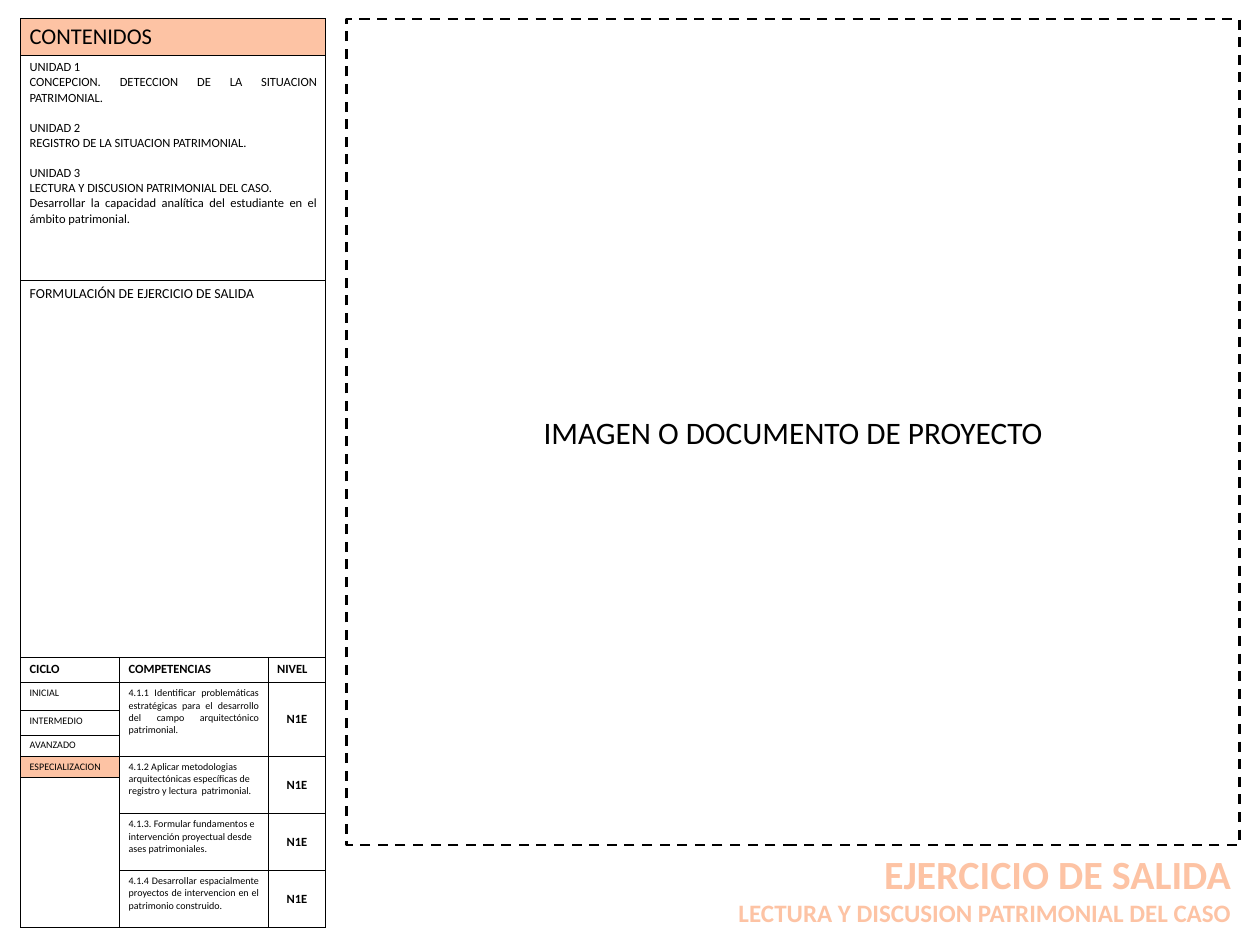
"""Builds the exit exercise sheet with its contents table and project area."""
from itertools import product

from lxml.etree import SubElement
from pptx import Presentation
from pptx.dml.color import RGBColor
from pptx.enum.dml import MSO_LINE
from pptx.enum.shapes import MSO_SHAPE
from pptx.enum.text import MSO_ANCHOR, MSO_AUTO_SIZE, PP_ALIGN
from pptx.oxml.ns import qn
from pptx.util import Inches, Pt

BLACK = "000000"
PEACH = "FDC3A4"
COLUMN_WIDTHS = [1.1, 1.65, 0.64]
ROW_HEIGHTS = [0.4, 2.5, 4.19, 0.28, 0.31, 0.27, 0.23, 0.24, 0.4, 0.63, 0.63]
UNITS = [
    ["UNIDAD 1", "CONCEPCION. DETECCION DE LA SITUACION PATRIMONIAL."],
    ["UNIDAD 2", "REGISTRO DE LA SITUACION PATRIMONIAL."],
    ["UNIDAD 3", "LECTURA Y DISCUSION PATRIMONIAL DEL CASO.",
     "Desarrollar la capacidad analítica del estudiante en el ámbito patrimonial."],
]
HEADINGS = ["CICLO", "COMPETENCIAS", "NIVEL"]
CYCLES = ["INICIAL", "INTERMEDIO", "AVANZADO", "ESPECIALIZACION"]
SKILLS = [
    (4, 3, PP_ALIGN.JUSTIFY, "4.1.1 Identificar problemáticas estratégicas para el "
     "desarrollo del campo arquitectónico patrimonial."),
    (7, 2, PP_ALIGN.LEFT, "4.1.2 Aplicar metodologias arquitectónicas específicas de "
     "registro y lectura  patrimonial."),
    (9, 1, PP_ALIGN.LEFT, "4.1.3. Formular fundamentos e intervención proyectual desde "
     "ases patrimoniales."),
    (10, 1, PP_ALIGN.JUSTIFY, "4.1.4 Desarrollar espacialmente proyectos de intervencion "
     "en el patrimonio construido."),
]


def color(value):
    """Turns a hex string into a colour."""
    return RGBColor.from_string(value)


class Sheet:
    """Holds the style and the current slide."""

    font = "Calibri"

    def __init__(self, deck):
        """Adds a page with a title."""
        self.page = deck.slides.add_slide(deck.slide_layouts[5])

    def paragraph(self, frame, text, size, bold=False, align=PP_ALIGN.JUSTIFY,
                  ink=BLACK, first=True, before=0):
        """Puts one paragraph into a text frame."""
        para = frame.paragraphs[0] if first else frame.add_paragraph()
        para.alignment = align
        para.space_before = Pt(before)
        span = para.add_run()
        span.text = text
        span.font.name = self.font
        span.font.size = Pt(size)
        span.font.bold = bold
        span.font.color.rgb = color(ink)

    def title(self, left, top, width, height, lines):
        """Fills the title placeholder with right-aligned lines."""
        box = self.page.shapes.title
        box.left, box.top = Inches(left), Inches(top)
        box.width, box.height = Inches(width), Inches(height)
        frame = box.text_frame
        frame.word_wrap = True
        frame.auto_size = MSO_AUTO_SIZE.NONE
        frame.vertical_anchor = MSO_ANCHOR.TOP
        for index, (text, size) in enumerate(lines):
            self.paragraph(frame, text, size, True, PP_ALIGN.RIGHT, PEACH, index == 0)

    def dashed_area(self, left, top, width, height, text):
        """Draws a dashed rectangle with a centred label."""
        box = self.page.shapes.add_shape(
            MSO_SHAPE.RECTANGLE, Inches(left), Inches(top), Inches(width), Inches(height))
        box.shadow.inherit = False
        box.fill.background()
        box.line.color.rgb = color(BLACK)
        box.line.width = Pt(2)
        box.line.dash_style = MSO_LINE.DASH
        box.text_frame.vertical_anchor = MSO_ANCHOR.MIDDLE
        self.paragraph(box.text_frame, text, 25, align=PP_ALIGN.CENTER)

    def table(self, left, top, widths, heights):
        """Adds an unstyled table with the given columns and rows."""
        grid = self.page.shapes.add_table(
            len(heights), len(widths), Inches(left), Inches(top),
            Inches(sum(widths)), Inches(sum(heights))).table
        grid.first_row = grid.horz_banding = False
        for column, width in zip(grid.columns, widths):
            column.width = Inches(width)
        for row, height in zip(grid.rows, heights):
            row.height = Inches(height)
        return grid

    def border(self, cell, top, bottom):
        """Draws the four borders of a cell."""
        properties = cell._tc.get_or_add_tcPr()
        for side, width in zip("LRTB", (1, 1, top, bottom)):
            line = SubElement(properties, qn(f"a:ln{side}"), w=str(Pt(width)))
            fill = SubElement(line, qn("a:solidFill"))
            SubElement(fill, qn("a:srgbClr"), val=BLACK)

    def cell(self, grid, row, column, rows=1, columns=1, fill=None, top=1, bottom=1,
             anchor=MSO_ANCHOR.TOP):
        """Formats a cell, merged where it spans, and returns its text frame."""
        for down, across in product(range(rows), range(columns)):
            part = grid.cell(row + down, column + across)
            self.border(part, top, bottom)
            if fill:
                part.fill.solid()
                part.fill.fore_color.rgb = color(fill)
            else:
                part.fill.background()
        origin = grid.cell(row, column)
        if rows * columns > 1:
            origin.merge(grid.cell(row + rows - 1, column + columns - 1))
        origin.vertical_anchor = anchor
        return origin.text_frame


def fill_contents(sheet, grid):
    """Fills the contents and competences table."""
    sheet.paragraph(sheet.cell(grid, 0, 0, columns=3, fill=PEACH), "CONTENIDOS", 18)
    units = sheet.cell(grid, 1, 0, columns=3, bottom=0.5)
    for number, lines in enumerate(UNITS):
        for index, text in enumerate(lines):
            gap = 12 if number and index == 0 else 0
            sheet.paragraph(units, text, 10, first=number + index == 0, before=gap)
    sheet.paragraph(sheet.cell(grid, 2, 0, columns=3, top=0.5),
                    "FORMULACIÓN DE EJERCICIO DE SALIDA", 11)
    for column, heading in enumerate(HEADINGS):
        sheet.paragraph(sheet.cell(grid, 3, column), heading, 10, True)
    for index, cycle in enumerate(CYCLES):
        fill = PEACH if cycle == "ESPECIALIZACION" else None
        frame = sheet.cell(grid, 4 + index, 0, fill=fill,
                           top=0.5 if index else 1, bottom=0.5)
        sheet.paragraph(frame, cycle, 8)
    sheet.cell(grid, 8, 0, rows=3, top=0.5, bottom=0.5)
    for row, rows, align, skill in SKILLS:
        sheet.paragraph(sheet.cell(grid, row, 1, rows), skill, 8, align=align)
        level = sheet.cell(grid, row, 2, rows, anchor=MSO_ANCHOR.MIDDLE)
        sheet.paragraph(level, "N1E", 10, True, PP_ALIGN.CENTER)


def main():
    """Builds and saves the deck."""
    deck = Presentation()
    deck.slide_width, deck.slide_height = Inches(14), Inches(10.5)
    sheet = Sheet(deck)
    sheet.title(4.39, 9.39, 9.39, 0.98, [
        ("EJERCICIO DE SALIDA", 32), ("LECTURA Y DISCUSION PATRIMONIAL DEL CASO", 20)])
    sheet.dashed_area(3.85, 0.21, 9.92, 9.18, "IMAGEN O DOCUMENTO DE PROYECTO")
    fill_contents(sheet, sheet.table(0.23, 0.21, COLUMN_WIDTHS, ROW_HEIGHTS))
    deck.save("out.pptx")


if __name__ == "__main__":
    main()
